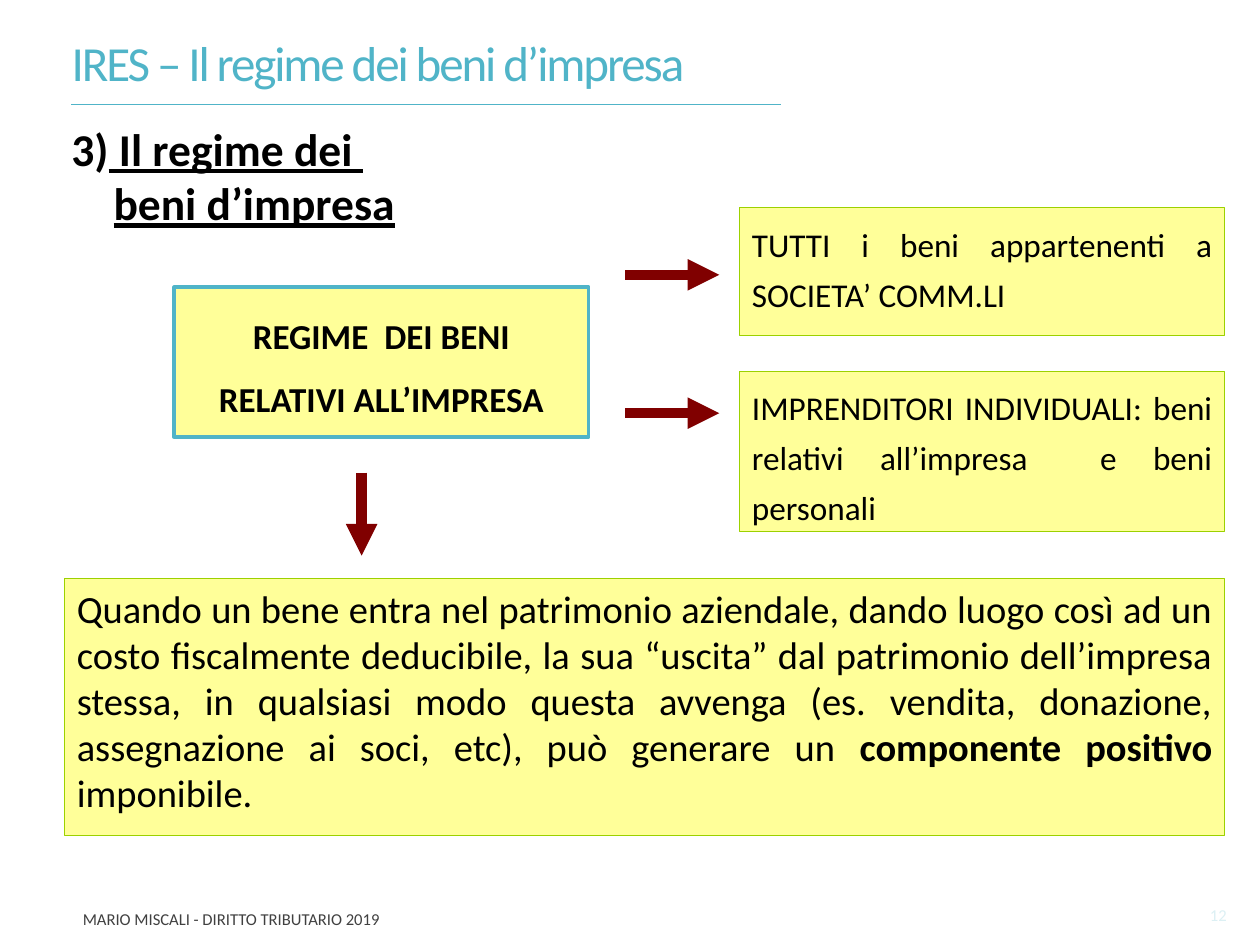
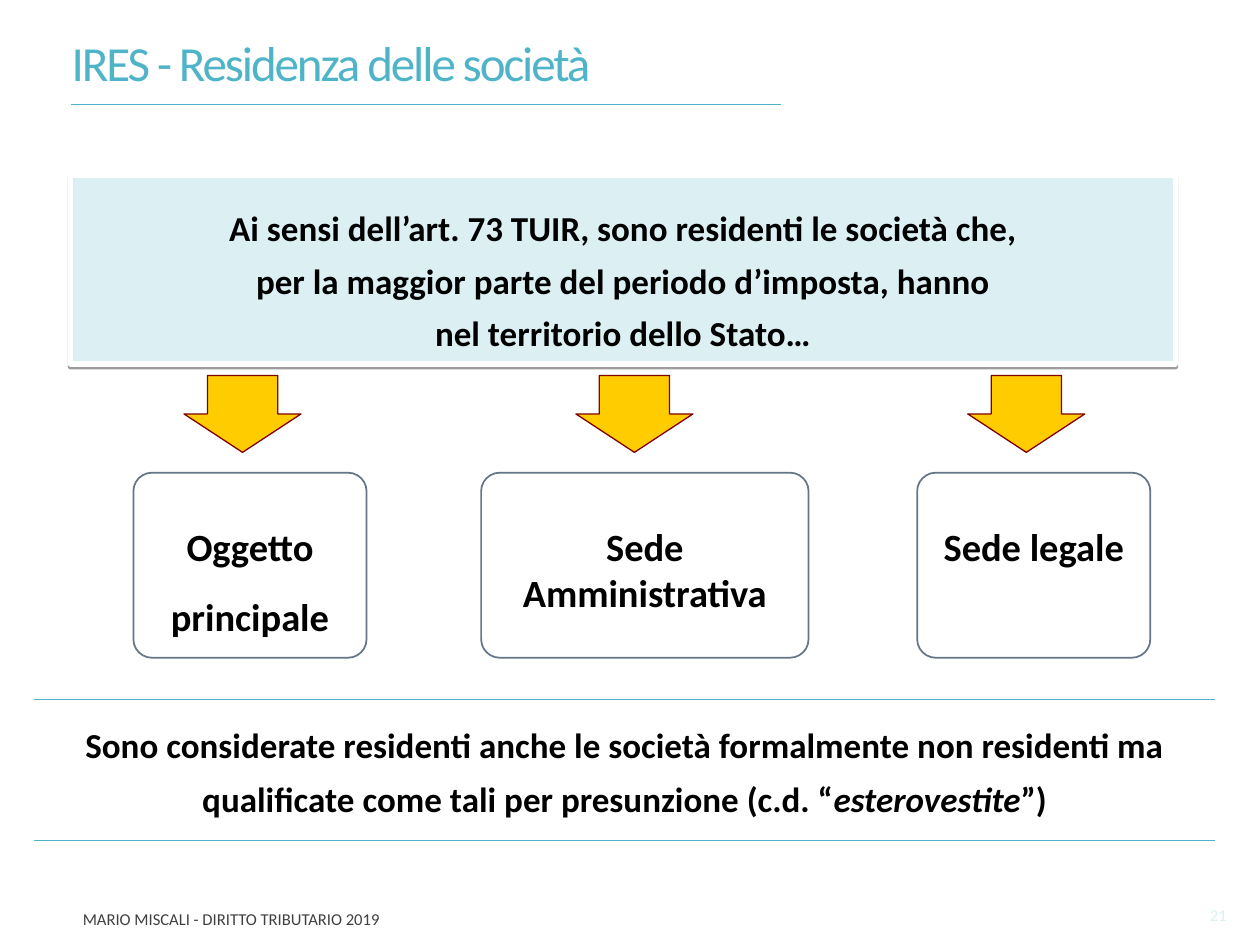
import pptx
import pptx.dml.color
import pptx.enum.shapes
import pptx.enum.text
import pptx.oxml
import pptx.oxml.ns
import pptx.util
from lxml import etree

Cm = pptx.util.Cm
Pt = pptx.util.Pt
RGBColor = pptx.dml.color.RGBColor
Align = pptx.enum.text.PP_ALIGN
Anchor = pptx.enum.text.MSO_ANCHOR
Shape = pptx.enum.shapes.MSO_SHAPE

FONT = "Calibri"
BLACK = RGBColor(0x00, 0x00, 0x00)
WHITE = RGBColor(0xFF, 0xFF, 0xFF)
TEAL = RGBColor(0x50, 0xB4, 0xC8)
PALE_TEAL = RGBColor(0xDC, 0xF0, 0xF4)
YELLOW = RGBColor(0xFF, 0xFF, 0x99)
GREEN = RGBColor(0x9C, 0xD1, 0x00)
DARK_RED = RGBColor(0x80, 0x00, 0x00)
GOLD = RGBColor(0xFF, 0xCC, 0x00)
SLATE = RGBColor(0x65, 0x76, 0x89)
FOOTER_GREY = RGBColor(0x40, 0x40, 0x40)

FOOTER = "MARIO MISCALI - DIRITTO TRIBUTARIO 2019"

# A paragraph is a list of (text, style) runs; style letters are b, i and u.
ASSETS_TITLE = "IRES – Il regime dei beni d’impresa"
ASSETS_PAGE = "12"
HEADING = [
    [("3)", ""), (" Il regime dei ", "u")],
    [("beni d’impresa", "u")],
]
REGIME = [[("REGIME  DEI BENI RELATIVI ALL’IMPRESA", "")]]
OWNERS = [  # top, height, text
    (4.19, 2.57, "TUTTI i beni appartenenti a SOCIETA’ COMM.LI"),
    (7.49, 3.23, "IMPRENDITORI INDIVIDUALI: beni relativi all’impresa  e beni personali"),
]
CONSEQUENCE = [[
    ("Quando un bene entra nel patrimonio aziendale, dando luogo così ad un costo "
     "fiscalmente deducibile, la sua “uscita” dal patrimonio dell’impresa stessa, in "
     "qualsiasi modo questa avvenga (es. vendita, donazione, assegnazione ai soci, etc), "
     "può generare un ", ""),
    ("componente positivo", "b"),
    (" imponibile.", ""),
]]
FLOW_ARROWS = [  # start x, start y, end x, end y
    (12.6, 5.54, 14.5, 5.54),
    (12.6, 8.33, 14.5, 8.33),
    (7.29, 9.53, 7.29, 11.2),
]

RESIDENCE_TITLE = "IRES - Residenza delle società"
RESIDENCE_PAGE = "21"
PREMISE = [
    ("Ai sensi dell’art. 73 TUIR, sono residenti le società che,", 1.5),
    ("per la maggior parte del periodo d’imposta, hanno", 1.25),
    ("nel territorio dello Stato…", 1.25),
]
CRITERIA = [  # left, width, top margin, line spacing, text
    (2.69, 4.7, 0.45, 1.5, "Oggetto principale"),
    (9.7, 6.6, 0.9, 1, "Sede Amministrativa"),
    (18.49, 4.7, 0.9, 1, "Sede legale"),
]
PRESUMPTION = [[
    ("Sono considerate residenti anche le società formalmente non residenti ma "
     "qualificate come tali per presunzione (c.d. “", ""),
    ("esterovestite", "i"),
    ("”)", ""),
]]


def write(frame, paragraphs, size, color=BLACK, bold=False, align=Align.LEFT,
          spacing=1.0, anchor=Anchor.TOP):
    frame.word_wrap = True
    frame.vertical_anchor = anchor
    for index, runs in enumerate(paragraphs):
        paragraph = frame.add_paragraph() if index else frame.paragraphs[0]
        paragraph.alignment = align
        paragraph.line_spacing = spacing
        font = paragraph.font
        font.name, font.size, font.bold = FONT, Pt(size), bold
        font.color.rgb = color
        for text, style in runs:
            run = paragraph.add_run()
            run.text = text
            if "b" in style:
                run.font.bold = True
            if "i" in style:
                run.font.italic = True
            if "u" in style:
                run.font.underline = True


def add_text(slide, box, paragraphs, size, **style):
    shape = slide.shapes.add_textbox(*map(Cm, box))
    write(shape.text_frame, paragraphs, size, **style)
    return shape


def add_box(slide, kind, box, fill, line, line_width):
    shape = slide.shapes.add_shape(kind, *map(Cm, box))
    shape.shadow.inherit = False
    shape.fill.solid()
    shape.fill.fore_color.rgb = fill
    shape.line.color.rgb = line
    shape.line.width = Pt(line_width)
    return shape


def add_line(slide, ends, color, width):
    line = slide.shapes.add_connector(
        pptx.enum.shapes.MSO_CONNECTOR.STRAIGHT, *map(Cm, ends))
    line.line.color.rgb = color
    line.line.width = Pt(width)
    etree.SubElement(line._element.spPr, pptx.oxml.ns.qn("a:effectLst"))
    return line


def add_flow_arrow(slide, ends):
    arrow = add_line(slide, ends, DARK_RED, 6)
    tail = etree.SubElement(arrow.line._get_or_add_ln(), pptx.oxml.ns.qn("a:tailEnd"))
    tail.set("type", "triangle")


def add_drop_shadow(shape):
    """Give the shape a sharp, faint shadow just below it."""
    effects = shape._element.spPr.find(pptx.oxml.ns.qn("a:effectLst"))
    effects.append(pptx.oxml.parse_xml(
        f'<a:outerShdw {pptx.oxml.ns.nsdecls("a")} blurRad="0" dist="{Pt(1.6)}" '
        'dir="5400000" rotWithShape="0"><a:srgbClr val="000000">'
        '<a:alpha val="38000"/></a:srgbClr></a:outerShdw>'))


def rule_cell(cell, color):
    """Draw lines above and below the cell and none at its sides."""
    properties = cell._tc.get_or_add_tcPr()
    solid = f'<a:solidFill><a:srgbClr val="{color}"/></a:solidFill>'
    for side, paint in (("L", "<a:noFill/>"), ("R", "<a:noFill/>"), ("T", solid), ("B", solid)):
        properties.append(pptx.oxml.parse_xml(
            f'<a:ln{side} {pptx.oxml.ns.nsdecls("a")} w="{Pt(1)}">{paint}</a:ln{side}>'))


def add_slide(presentation, title, page):
    """Add a slide with the shared title, title rule, footer and page number."""
    slide = presentation.slides.add_slide(presentation.slide_layouts[5])
    heading = slide.shapes.title
    heading.left, heading.top, heading.width, heading.height = map(Cm, (1.19, 0.66, 22.45, 1.4))
    write(heading.text_frame, [[(title, "")]], 28, color=TEAL, spacing=0.9)
    heading.text_frame.auto_size = pptx.enum.text.MSO_AUTO_SIZE.NONE
    for run in heading.text_frame.paragraphs[0].runs:
        run._r.get_or_add_rPr().set("spc", "-120")
    add_line(slide, (1.44, 2.1, 15.74, 2.1), TEAL, 0.5)
    add_text(slide, (1.42, 18.21, 10.46, 0.64), [[(FOOTER, "")]], 9.5,
             color=FOOTER_GREY, anchor=Anchor.MIDDLE)
    add_text(slide, (22.4, 18.13, 2.58, 0.64), [[(page, "")]], 9.5,
             color=PALE_TEAL, align=Align.RIGHT, anchor=Anchor.MIDDLE)
    return slide


def build_assets_slide(presentation):
    slide = add_slide(presentation, ASSETS_TITLE, ASSETS_PAGE)
    heading = add_text(slide, (1.19, 2.31, 13.28, 2.46), HEADING, 26, bold=True)
    heading.text_frame.paragraphs[1]._p.get_or_add_pPr().set("marL", str(Cm(0.85)))

    regime = add_box(slide, Shape.RECTANGLE, (3.51, 5.79, 8.36, 3.02), YELLOW, TEAL, 2)
    write(regime.text_frame, REGIME, 20, bold=True, align=Align.CENTER, spacing=1.5)
    for top, height, text in OWNERS:
        owner = add_box(slide, Shape.RECTANGLE, (14.91, top, 9.78, height), YELLOW, GREEN, 0.75)
        write(owner.text_frame, [[(text, "")]], 19, align=Align.JUSTIFY, spacing=1.25)
    consequence = add_box(slide, Shape.RECTANGLE, (1.3, 11.66, 23.39, 5.18), YELLOW, GREEN, 0.75)
    write(consequence.text_frame, CONSEQUENCE, 22, align=Align.JUSTIFY)
    for ends in FLOW_ARROWS:
        add_flow_arrow(slide, ends)


def build_residence_slide(presentation):
    slide = add_slide(presentation, RESIDENCE_TITLE, RESIDENCE_PAGE)
    premise = add_box(slide, Shape.RECTANGLE, (1.42, 3.53, 22.28, 3.81), PALE_TEAL, WHITE, 3)
    add_drop_shadow(premise)
    write(premise.text_frame, [[(text, "")] for text, _ in PREMISE], 20, bold=True,
          align=Align.CENTER, anchor=Anchor.MIDDLE)
    for paragraph, (_, spacing) in zip(premise.text_frame.paragraphs, PREMISE):
        paragraph.line_spacing = spacing

    for index, (left, width, margin, spacing, text) in enumerate(CRITERIA):
        arrow = add_box(slide, Shape.DOWN_ARROW, (3.71 + 7.9 * index, 7.57, 2.36, 1.55),
                        GOLD, DARK_RED, 0.75)
        arrow.adjustments[0], arrow.adjustments[1] = 0.6, 0.5
        criterion = add_box(slide, Shape.ROUNDED_RECTANGLE, (left, 9.53, width, 3.73),
                            WHITE, SLATE, 1)
        criterion.adjustments[0] = 0.1
        criterion.text_frame.margin_top = Cm(margin)
        write(criterion.text_frame, [[(text, "")]], 22, bold=True,
              align=Align.CENTER, spacing=spacing)

    table = slide.shapes.add_table(1, 1, *map(Cm, (0.69, 14.1, 23.8, 2.84))).table
    table.first_row = table.horz_banding = False
    cell = table.cell(0, 0)
    rule_cell(cell, TEAL)
    cell.fill.background()
    cell.margin_top = Cm(0.3)
    write(cell.text_frame, PRESUMPTION, 20, bold=True, align=Align.CENTER, spacing=1.25)
    cell.vertical_anchor = Anchor.TOP


def main():
    presentation = pptx.Presentation()
    presentation.slide_width = Cm(25.4)
    presentation.slide_height = Cm(19.05)
    build_assets_slide(presentation)
    build_residence_slide(presentation)
    presentation.save("out.pptx")


if __name__ == "__main__":
    main()
